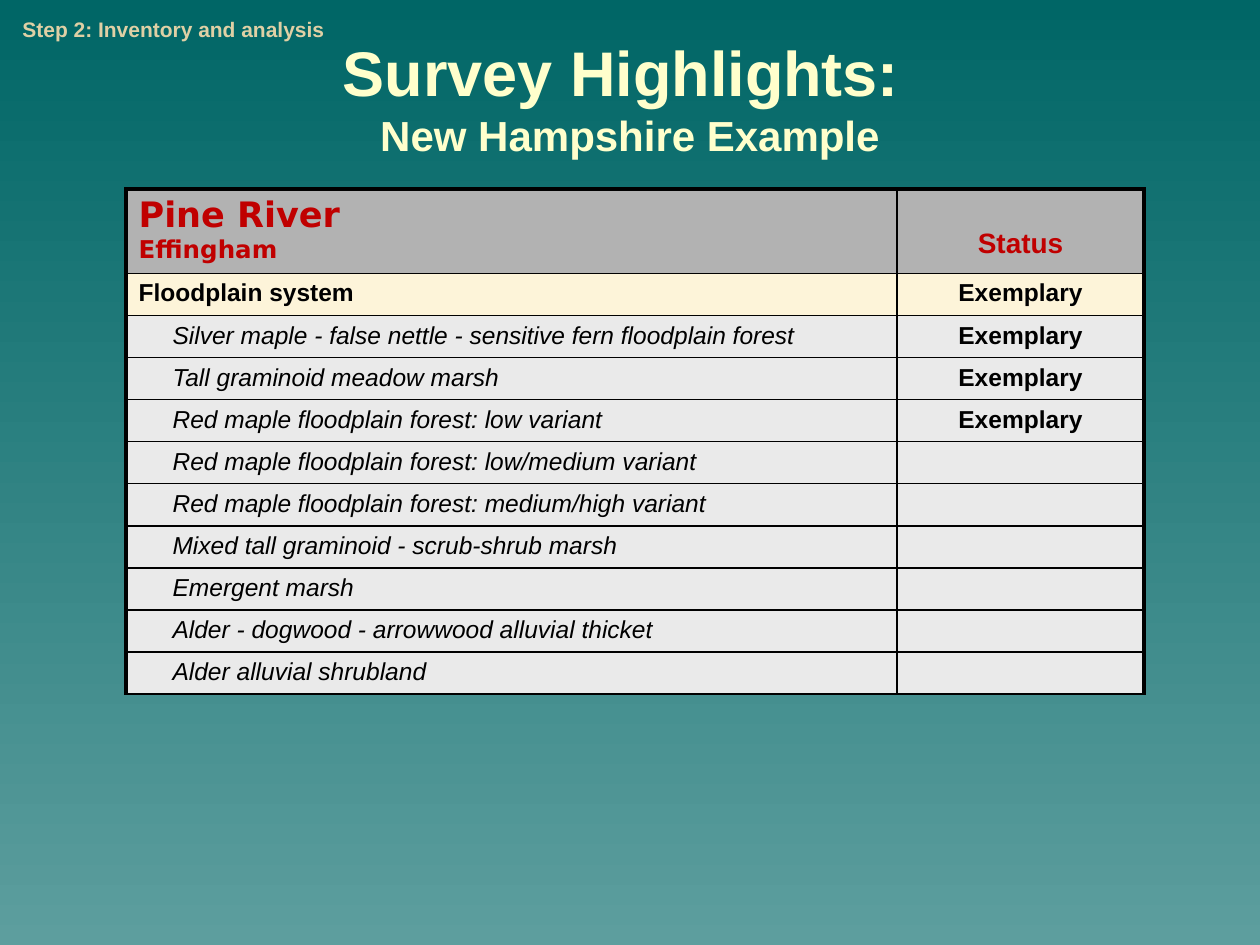
from dataclasses import dataclass

from lxml.etree import SubElement
from pptx import Presentation
from pptx.dml.color import RGBColor
from pptx.enum.text import MSO_ANCHOR, PP_ALIGN
from pptx.oxml.ns import qn
from pptx.util import Inches, Pt


@dataclass(frozen=True)
class Theme:
    sans: str = "Arial"
    wide: str = "DejaVu Sans"
    top: str = "006666"
    base: str = "5D9E9E"
    title: str = "FFFFCC"
    step: str = "DFD0A5"
    head: str = "C00000"
    ink: str = "000000"
    grey: str = "B2B2B2"
    cream: str = "FDF4D9"
    pale: str = "EAEAEA"
    huge: int = 36
    large: int = 24
    river: int = 20
    status: int = 16
    body: int = 14
    small: int = 12
    thick: float = 2.25
    thin: float = 1


class Deck:
    def __init__(self, theme):
        self.theme = theme
        self.file = Presentation()
        self.file.slide_width, self.file.slide_height = Inches(10), Inches(7.5)
        self.slide = self.file.slides.add_slide(self.file.slide_layouts[6])

    def backdrop(self):
        fill = self.slide.background.fill
        fill.gradient()
        fill.gradient_angle = 270
        for stop, color in zip(fill.gradient_stops, (self.theme.top, self.theme.base)):
            stop.color.rgb = RGBColor.from_string(color)

    def style(self, font, size, color, name=None, bold=True, italic=False):
        font.name = name or self.theme.sans
        font.size = Pt(size)
        font.bold, font.italic = bold, italic
        font.color.rgb = RGBColor.from_string(color)

    def box(self, left, top, width, height):
        shape = self.slide.shapes.add_textbox(*map(Inches, (left, top, width, height)))
        shape.text_frame.word_wrap = True
        return shape.text_frame

    def title(self, main, sub):
        frame = self.box(0.5, 0.46, 9, 0.61)
        frame.vertical_anchor = MSO_ANCHOR.MIDDLE
        para = frame.paragraphs[0]
        para.alignment = PP_ALIGN.CENTER
        for text, size in ((main, self.theme.huge), (sub, self.theme.large)):
            if para.runs:
                para.add_line_break()
            run = para.add_run()
            run.text = text
            self.style(run.font, size, self.theme.title)

    def label(self, text):
        para = self.box(0.08, 0.08, 2.67, 0.5).paragraphs[0]
        para.text = text
        self.style(para.font, self.theme.small, self.theme.step)

    def grid(self, left, top, widths, heights):
        shape = self.slide.shapes.add_table(
            len(heights), len(widths), Inches(left), Inches(top),
            Inches(sum(widths)), Inches(sum(heights)))
        table = shape.table
        table.first_row = table.horz_banding = False
        for col, width in zip(table.columns, widths):
            col.width = Inches(width)
        for row, height in zip(table.rows, heights):
            row.height = Inches(height)
        return table

    def edges(self, cell, heavy):
        props = cell._tc.get_or_add_tcPr()
        for spot, side in enumerate("LRTB"):
            width = self.theme.thick if side in heavy else self.theme.thin
            line = props.makeelement(qn(f"a:ln{side}"), {"w": str(Pt(width))})
            fill = SubElement(line, qn("a:solidFill"))
            SubElement(fill, qn("a:srgbClr"), val=self.theme.ink)
            props.insert(spot, line)

    def cell(self, cell, text, fill, heavy, size, color,
             center=False, italic=False, indent=0.1):
        cell.fill.solid()
        cell.fill.fore_color.rgb = RGBColor.from_string(fill)
        cell.margin_left = Inches(indent)
        self.edges(cell, heavy)
        para = cell.text_frame.paragraphs[0]
        if not text:
            SubElement(para._p, qn("a:endParaRPr"), sz=str(size * 100))
            return
        para.text = text
        para.alignment = PP_ALIGN.CENTER if center else PP_ALIGN.LEFT
        self.style(para.font, size, color, bold=not italic, italic=italic)

    def header(self, row, river, town, status):
        look = self.theme
        place, state = row
        self.cell(place, river, look.grey, "LT", look.river, look.head)
        lower = place.text_frame.add_paragraph()
        lower.text = town
        for para, size in zip(place.text_frame.paragraphs, (look.river, look.body)):
            self.style(para.font, size, look.head, look.wide)
        self.cell(state, status, look.grey, "RT", look.status, look.head, center=True)
        state.vertical_anchor = MSO_ANCHOR.BOTTOM
        state.margin_bottom = Inches(0.11)

    def entry(self, row, name, status, system):
        look = self.theme
        fill = look.cream if system else look.pale
        self.cell(row[0], name, fill, "L", look.body, look.ink,
                  italic=not system, indent=0.1 if system else 0.37)
        self.cell(row[1], status, fill, "R", look.body, look.ink, center=True)


NAMES = [
    "Floodplain system",
    "Silver maple - false nettle - sensitive fern floodplain forest",
    "Tall graminoid meadow marsh",
    "Red maple floodplain forest: low variant",
    "Red maple floodplain forest: low/medium variant",
    "Red maple floodplain forest: medium/high variant",
    "Mixed tall graminoid - scrub-shrub marsh",
    "Emergent marsh",
    "Alder - dogwood - arrowwood alluvial thicket",
    "Alder alluvial shrubland",
]
PRIME = 4


def main():
    deck = Deck(Theme())
    deck.backdrop()
    deck.title("Survey Highlights: ", "New Hampshire Example")
    deck.label("Step 2: Inventory and analysis")
    step = (4 - 0.67) / len(NAMES)
    table = deck.grid(1, 1.5, [6.12, 1.96], [0.67] + [step] * len(NAMES))
    head, *rows = [list(row.cells) for row in table.rows]
    deck.header(head, "Pine River", "Effingham", "Status")
    for spot, (row, name) in enumerate(zip(rows, NAMES)):
        deck.entry(row, name, "Exemplary" if spot < PRIME else "", spot == 0)
    deck.file.save("out.pptx")


if __name__ == "__main__":
    main()
